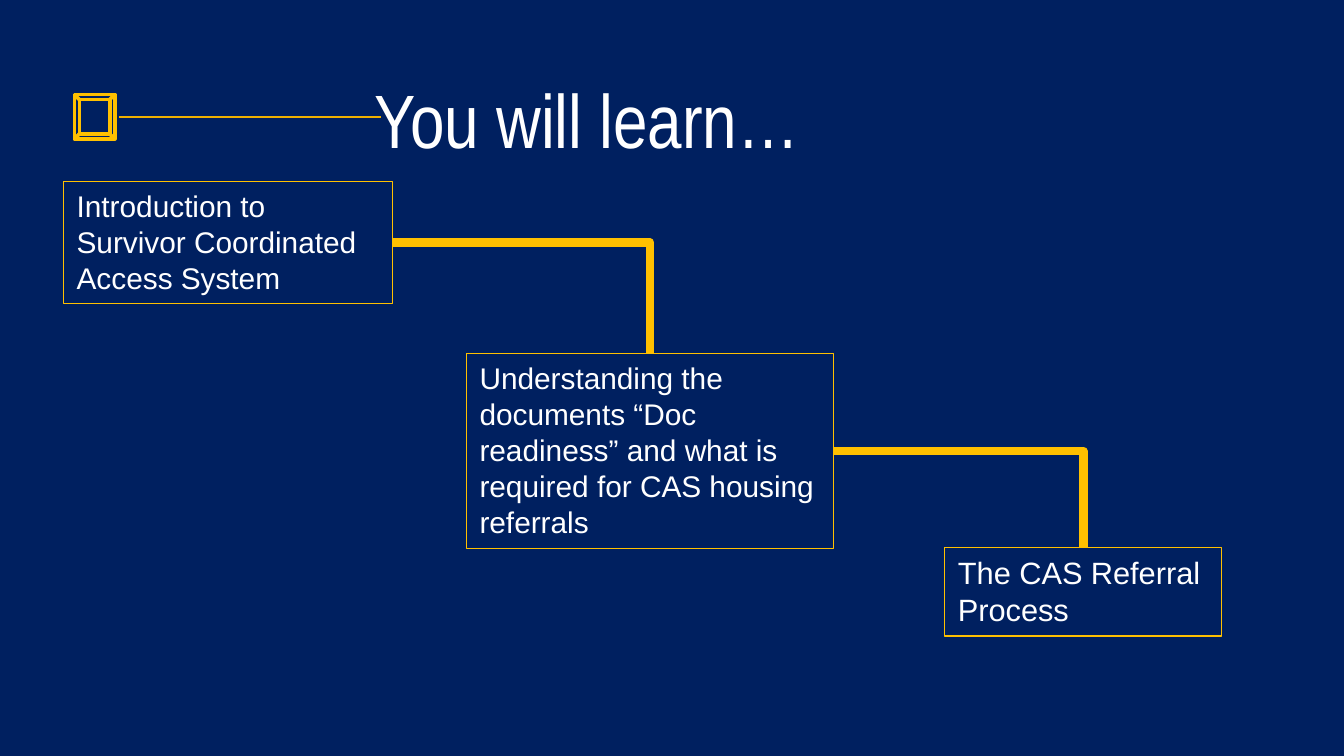
import pptx
import pptx.util
import pptx.dml.color
import pptx.enum.shapes
import pptx.enum.text
import lxml.etree

COLORS = {"navy": "002060", "gold": "FFC000", "dark_gold": "EFB000", "white": "FFFFFF"}
SHAPES = pptx.enum.shapes.MSO_SHAPE
CONNECTORS = pptx.enum.shapes.MSO_CONNECTOR
ALIGN = pptx.enum.text.PP_ALIGN
RIGHT_SITE, TOP_SITE = 3, 0  # connection sites of a rectangle


class StepSlide:
    """Style and current slide; lengths are cells of a 100-column grid."""

    def __init__(self, deck):
        self.cell = deck.slide_width / 100
        self.page = deck.slides.add_slide(deck.slide_layouts[6])
        self.paint(self.page.background.fill, "navy")

    def grid(self, *cells):
        return [round(count * self.cell) for count in cells]

    def paint(self, fill, color):
        fill.solid()
        fill.fore_color.rgb = pptx.dml.color.RGBColor.from_string(COLORS[color])

    def stroke(self, line, color, width):
        self.paint(line.fill, color)
        line.width = pptx.util.Pt(width)

    def shape(self, area, kind=SHAPES.RECTANGLE, fill=None, width=None):
        shape = self.page.shapes.add_shape(kind, *self.grid(*area))
        shape.shadow.inherit = False
        if fill:
            self.paint(shape.fill, fill)
        else:
            shape.fill.background()
        if width:
            self.stroke(shape.line, "gold", width)
        else:
            shape.line.fill.background()
        return shape

    def text_box(self, text, area, size, font="Arial", align=ALIGN.LEFT, **look):
        box = self.shape(area, **look)
        frame = box.text_frame
        frame.word_wrap = True
        frame.vertical_anchor = pptx.enum.text.MSO_ANCHOR.TOP
        frame.auto_size = pptx.enum.text.MSO_AUTO_SIZE.SHAPE_TO_FIT_TEXT
        para = frame.paragraphs[0]
        para.text = text
        para.alignment = align
        para.font.name = font
        para.font.size = pptx.util.Pt(size)
        self.paint(para.font.fill, "white")
        return box

    def connector(self, kind, ends, color, width):
        connector = self.page.shapes.add_connector(kind, *self.grid(*ends))
        self.stroke(connector.line, color, width)
        properties = connector._element.spPr
        lxml.etree.SubElement(properties, pptx.oxml.ns.qn("a:effectLst"))
        return connector

    def bend(self, start, end):
        """Join the right side of one box to the top of the next."""
        connector = self.connector(CONNECTORS.ELBOW, (0, 0, 1, 1), "gold", 4.5)
        connector.begin_connect(start, RIGHT_SITE)
        connector.end_connect(end, TOP_SITE)
        geometry = connector._element.spPr.find(pptx.oxml.ns.qn("a:prstGeom"))
        geometry.set("prst", "bentConnector2")


def main():
    deck = pptx.Presentation()
    deck.slide_width = pptx.util.Inches(10)
    deck.slide_height = deck.slide_width * 9 // 16
    slide = StepSlide(deck)

    # Descending steps
    steps = [
        ("Introduction to Survivor Coordinated Access System",
         (4.72, 13.5, 24.5, 9.1), 16),
        ("Understanding the documents “Doc readiness” and what is required "
         "for CAS housing referrals", (34.7, 26.3, 27.33, 14.5), 16),
        ("The CAS Referral Process", (70.3, 40.72, 20.6, 6.6), 16.5),
    ]
    boxes = [slide.text_box(text, area, size, width=0.75) for text, area, size in steps]
    for start, end in zip(boxes, boxes[1:]):
        slide.bend(start, end)

    # Title with its ornament
    slide.text_box("You will learn…", (0, 4.9, 60.5, 7.8), 40.5,
                   "Arial Narrow", ALIGN.RIGHT, fill="navy")
    slide.shape((5.54, 7.04, 3, 3.3), SHAPES.BEVEL, width=2)
    slide.connector(CONNECTORS.STRAIGHT, (8.84, 8.7, 28.36, 8.7), "dark_gold", 0.75)

    deck.save("out.pptx")


if __name__ == "__main__":
    main()
